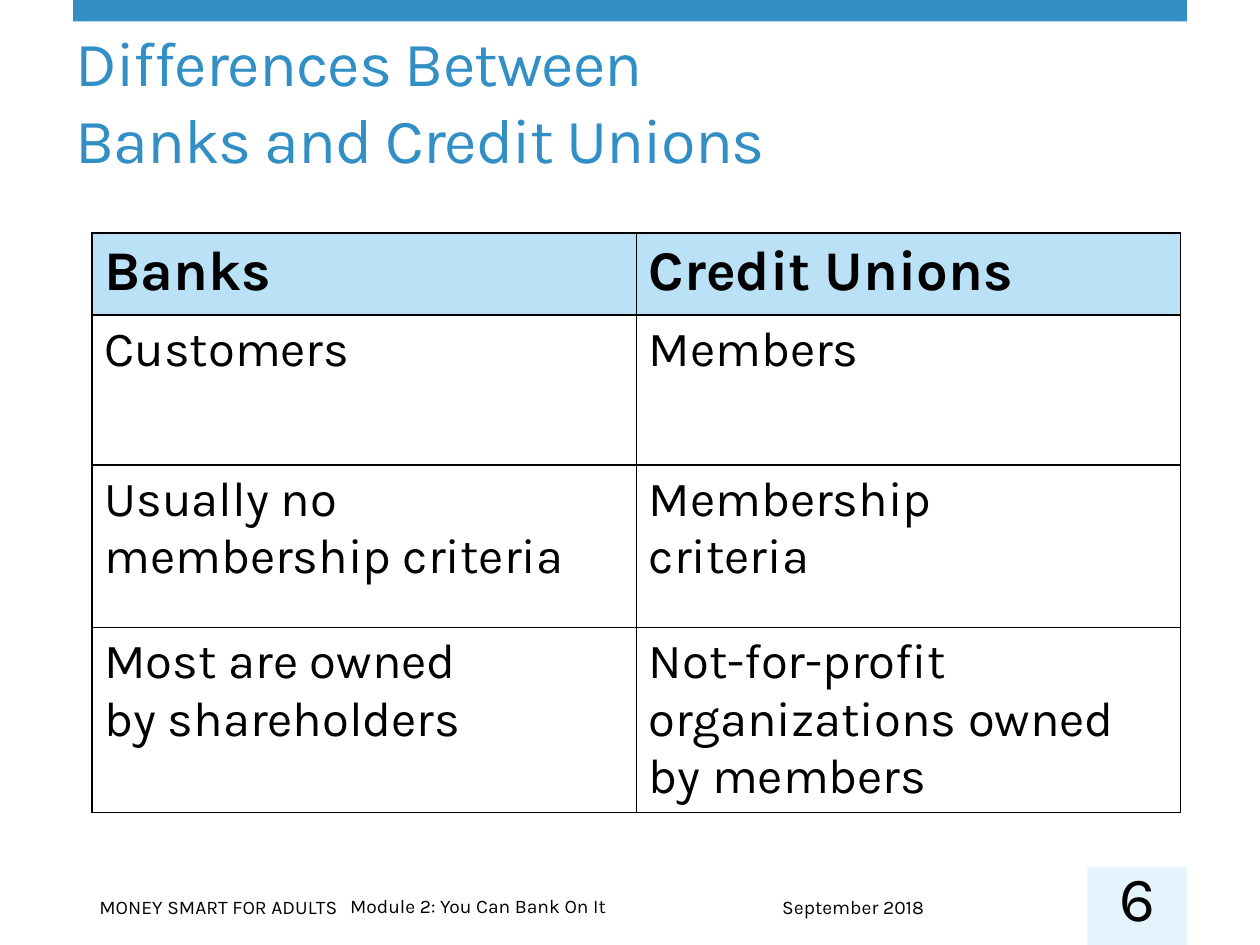
from lxml import etree
from pptx import Presentation
from pptx.dml.color import RGBColor
from pptx.enum.shapes import MSO_SHAPE
from pptx.enum.text import MSO_ANCHOR, MSO_AUTO_SIZE, PP_ALIGN
from pptx.oxml.ns import qn
from pptx.util import Pt

PX = 9144  # 100 px to the inch
FONT = "Karla"
COLORS = {
    "accent": "318FC5",
    "page_number": "E4F3FC",
    "header": "76C5EF",
    "text": "000000",
}
RECTANGLE = MSO_SHAPE.RECTANGLE
BOTTOM, MIDDLE = MSO_ANCHOR.BOTTOM, MSO_ANCHOR.MIDDLE
CENTER, LEFT = PP_ALIGN.CENTER, PP_ALIGN.LEFT
NO_AUTOFIT = MSO_AUTO_SIZE.NONE

COLUMN_WIDTH = 432
ROW_HEIGHTS = [65, 119, 129, 147]
COMPARISON = [
    ("Banks", "Credit Unions"),
    ("Customers", "Members"),
    ("Usually no\vmembership criteria", "Membership\vcriteria"),
    ("Most are owned\vby shareholders",
     "Not-for-profit organizations owned\vby members"),
]


def px(*lengths):
    return [length * PX for length in lengths]


def rgb(name):
    return RGBColor.from_string(COLORS[name])


def style(paragraph, size, color="text", bold=False):
    font = paragraph.font
    font.name, font.size, font.bold = FONT, Pt(size), bold
    font.color.rgb = rgb(color)


def add_block(slide, box, color):
    block = slide.shapes.add_shape(RECTANGLE, *px(*box))
    block.shadow.inherit = False
    block.fill.solid()
    block.fill.fore_color.rgb = rgb(color)
    block.line.fill.background()


def add_label(slide, box, text, size=11, wrap=True):
    frame = slide.shapes.add_textbox(*px(*box)).text_frame
    frame.word_wrap = wrap
    frame.text = text
    style(frame.paragraphs[0], size)
    return frame


def set_title(slide, box, text):
    title = slide.shapes.title
    title.left, title.top, title.width, title.height = px(*box)
    frame = title.text_frame
    frame.auto_size = NO_AUTOFIT
    frame.vertical_anchor = BOTTOM
    frame.text = text
    heading = frame.paragraphs[0]
    heading.alignment = LEFT
    heading.line_spacing = 1.02
    style(heading, 36, "accent")
    for run in heading.runs:
        run.font._element.set("spc", "-60")


def add_borders(cell):
    properties = cell._tc.get_or_add_tcPr()
    for side in ("a:lnL", "a:lnR", "a:lnT", "a:lnB"):
        line = etree.SubElement(properties, qn(side), w=str(Pt(1)))
        fill = etree.SubElement(line, qn("a:solidFill"))
        etree.SubElement(fill, qn("a:srgbClr"), val=COLORS["text"])


def fill_header(cell):
    """Fill with the header colour at half opacity."""
    cell.fill.solid()
    cell.fill.fore_color.rgb = rgb("header")
    color = cell._tc.tcPr.find(qn("a:solidFill")).find(qn("a:srgbClr"))
    etree.SubElement(color, qn("a:alpha"), val="50000")


def add_comparison(slide, left, top):
    columns = len(COMPARISON[0])
    table = slide.shapes.add_table(
        len(COMPARISON), columns,
        *px(left, top, COLUMN_WIDTH * columns, sum(ROW_HEIGHTS))).table
    table.first_row = table.horz_banding = False
    for row, height in zip(table.rows, ROW_HEIGHTS):
        row.height = height * PX
    for r, texts in enumerate(COMPARISON):
        for c, text in enumerate(texts):
            cell = table.cell(r, c)
            cell.text_frame.text = text
            paragraph = cell.text_frame.paragraphs[0]
            add_borders(cell)
            if r == 0:
                fill_header(cell)
                style(paragraph, 32, bold=True)
            else:
                cell.fill.background()
                paragraph.space_after = Pt(12)
                style(paragraph, 28)


def add_page_number(slide, number):
    add_block(slide, (863, 688, 79, 62), "page_number")
    frame = add_label(slide, (863, 696, 79, 31), number, 36)
    frame.margin_left = frame.margin_right = 0
    frame.margin_top = frame.margin_bottom = 0
    frame.vertical_anchor = MIDDLE
    frame.paragraphs[0].alignment = CENTER


def main():
    deck = Presentation()
    deck.slide_width, deck.slide_height = px(1000, 750)
    slide = deck.slides.add_slide(deck.slide_layouts.get_by_name("Title Only"))

    add_block(slide, (58, 0, 884, 17), "accent")
    set_title(slide, (50, 45, 867, 100),
              "Differences Between\vBanks and Credit Unions")
    add_comparison(slide, 73, 185)
    add_label(slide, (69, 706, 209, 29), "MONEY SMART FOR ADULTS", wrap=False)
    add_label(slide, (268, 705, 566, 29), "Module 2: You Can Bank On It")
    add_label(slide, (611, 706, 252, 29), "September 2018")
    add_page_number(slide, "6")

    deck.save("out.pptx")


if __name__ == "__main__":
    main()
